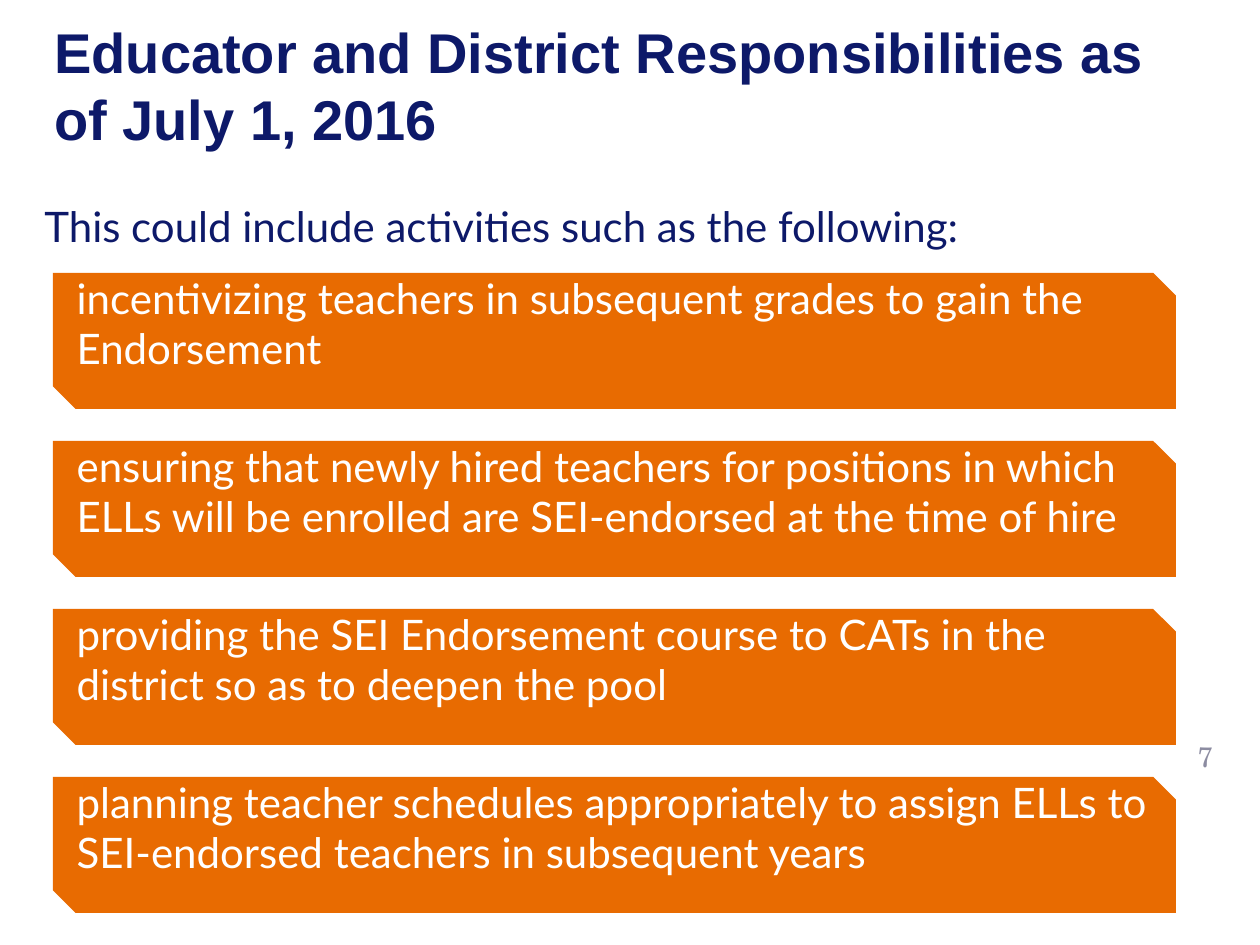
from pptx import Presentation
from pptx.dml.color import RGBColor
from pptx.enum.shapes import MSO_SHAPE
from pptx.enum.text import MSO_ANCHOR, PP_ALIGN
from pptx.util import Emu, Pt

SNIP = MSO_SHAPE.SNIP_2_DIAG_RECTANGLE
TOP, MIDDLE = MSO_ANCHOR.TOP, MSO_ANCHOR.MIDDLE
LEFT, CENTER = PP_ALIGN.LEFT, PP_ALIGN.CENTER

TITLE = "Educator and District Responsibilities as of July 1, 2016"
INTRO = "This could include activities such as the following:"
PAGE = "7"
ACTIVITIES = [
    "incentivizing teachers in subsequent grades to gain the Endorsement",
    "ensuring that newly hired teachers for positions in which ELLs will be enrolled are SEI-endorsed at the time of hire",
    "providing the SEI Endorsement course to CATs in the district so as to deepen the pool",
    "planning teacher schedules appropriately to assign ELLs to SEI-endorsed teachers in subsequent years",
]
COLORS = {"navy": "0D1969", "orange": "E86B01", "white": "FFFFFF", "gray": "8C8CA1"}
BAR_X, BAR_Y, BAR_W, BAR_H, BAR_STEP = 53, 273, 1123, 136, 168


def px(n):
    return Emu(n * 914400 // 126)


def rgb(name):
    return RGBColor.from_string(COLORS[name])


def write(sp, text, font, size, color, bold=False, align=LEFT, anchor=TOP):
    tf = sp.text_frame
    tf.word_wrap = True
    tf.vertical_anchor = anchor
    p = tf.paragraphs[0]
    p.alignment = align
    r = p.add_run()
    r.text = text
    r.font.name = font
    r.font.size = Pt(size)
    r.font.bold = bold
    r.font.color.rgb = rgb(color)


def add_text(slide, box, *args, **kwargs):
    sp = slide.shapes.add_textbox(*map(px, box))
    write(sp, *args, **kwargs)


def add_bar(slide, i, text):
    box = (BAR_X, BAR_Y + i * BAR_STEP, BAR_W, BAR_H)
    sp = slide.shapes.add_shape(SNIP, *map(px, box))
    sp.shadow.inherit = False
    sp.fill.solid()
    sp.fill.fore_color.rgb = rgb("orange")
    sp.line.fill.background()
    sp.text_frame.margin_top = 0
    sp.text_frame.margin_bottom = px(36)
    write(sp, text, "Lato", 24, "white", anchor=MIDDLE)


def main():
    prs = Presentation()
    prs.slide_width, prs.slide_height = px(1260), px(945)
    slide = prs.slides.add_slide(prs.slide_layouts[6])
    add_text(slide, (1169, 725, 73, 63), PAGE, "TeX Gyre Schola", 16, "gray",
             align=CENTER, anchor=MIDDLE)
    add_text(slide, (32, 194, 1155, 63), INTRO, "Lato", 24, "navy")
    add_text(slide, (42, 32, 1134, 105), TITLE, "Arial", 32, "navy",
             bold=True, anchor=MIDDLE)
    for i, text in enumerate(ACTIVITIES):
        add_bar(slide, i, text)
    prs.save("out.pptx")


if __name__ == "__main__":
    main()
